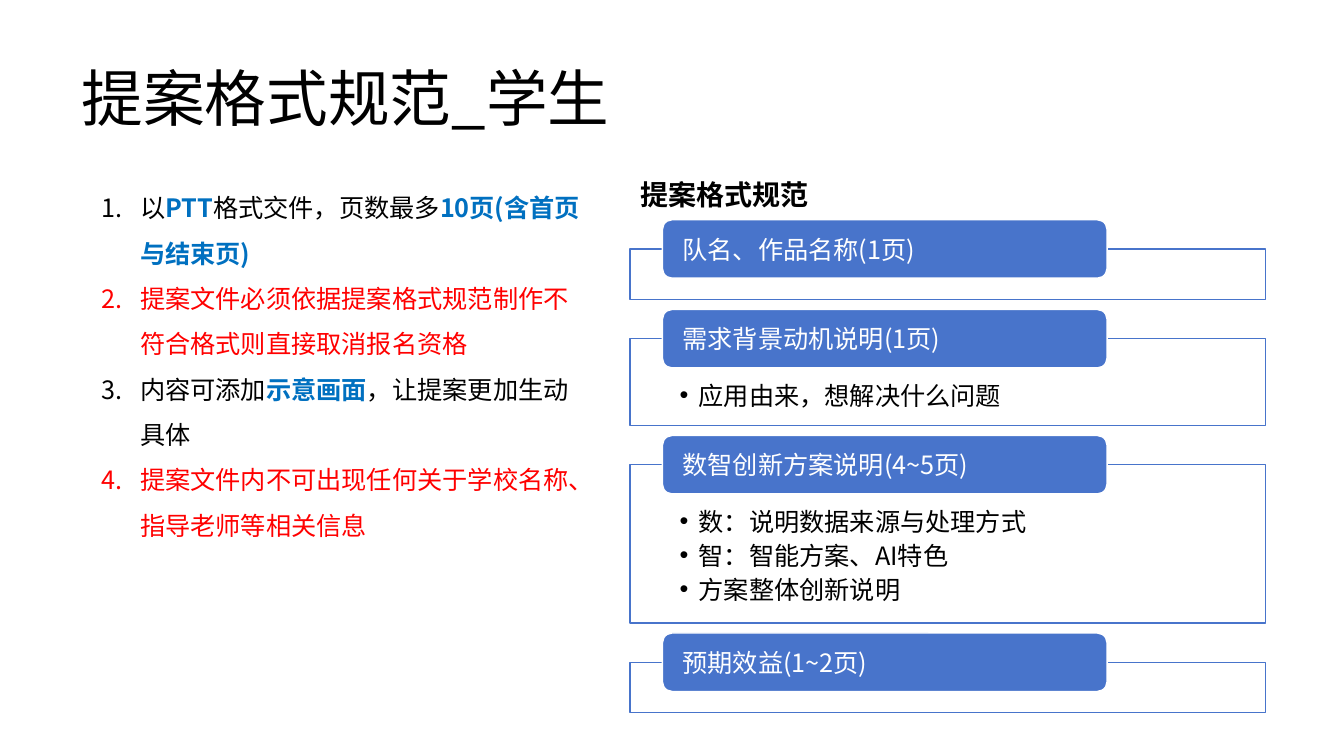
from dataclasses import dataclass

from lxml import etree
from pptx import Presentation
from pptx.dml.color import RGBColor
from pptx.enum.shapes import MSO_SHAPE as SHAPE
from pptx.enum.text import MSO_ANCHOR as ANCHOR, MSO_AUTO_SIZE as AUTO, PP_ALIGN as ALIGN
from pptx.oxml.ns import qn
from pptx.util import Inches, Pt

FONT = "Noto Sans CJK SC"
BLACK, WHITE, RED, ACCENT, FRAME = "000000", "FFFFFF", "FF0000", "0070C0", "4874CB"
LEFT, FRAME_W = 6.25, 6.3
FIRST_TOP, GAP = 2.47, 0.39
CHIP_H, CHIP_RISE = 0.58, 0.29


@dataclass
class Section:
    title: str
    height: float
    points: tuple[str, ...] = ()


RULES = [
    [("以", BLACK), ("PTT", ACCENT), ("格式交件，页数最多", BLACK), ("10页(含首页与结束页)", ACCENT)],
    [("提案文件必须依据提案格式规范制作不符合格式则直接取消报名资格", RED)],
    [("内容可添加", BLACK), ("示意画面", ACCENT), ("，让提案更加生动具体", BLACK)],
    [("提案文件内不可出现任何关于学校名称、指导老师等相关信息", RED)],
]
SECTIONS = [
    Section("队名、作品名称(1页)", 0.5),
    Section("需求背景动机说明(1页)", 0.86, ("应用由来，想解决什么问题",)),
    Section("数智创新方案说明(4~5页)", 1.57,
            ("数：说明数据来源与处理方式", "智：智能方案、AI特色", "方案整体创新说明")),
    Section("预期效益(1~2页)", 0.5),
]


def rgb(color: str) -> RGBColor:
    return RGBColor.from_string(color)


def add_text(p, text: str, *, size=18, color=BLACK, bold=False) -> None:
    r = p.add_run()
    r.text = text
    r.font.name, r.font.size, r.font.bold = FONT, Pt(size), bold
    r.font.color.rgb = rgb(color)
    etree.SubElement(r.font._element, qn("a:ea"), typeface=FONT)


def set_bullet(p, indent: float, tag: str, **attrs: str) -> None:
    pPr = p._p.get_or_add_pPr()
    pPr.set("marL", str(Inches(indent)))
    pPr.set("indent", str(-Inches(indent)))
    if tag == "a:buChar":
        etree.SubElement(pPr, qn("a:buFont"), typeface="Arial")
    etree.SubElement(pPr, qn(tag), **attrs)


def place(sp, x: float, y: float, w: float, h: float) -> None:
    sp.left, sp.top, sp.width, sp.height = map(Inches, (x, y, w, h))


def next_paragraph(tf, index: int):
    p = tf.add_paragraph() if index else tf.paragraphs[0]
    p.alignment = ALIGN.LEFT
    return p


def add_box(s, kind, box: tuple, fill: str, line: str, margins: tuple, anchor):
    sp = s.shapes.add_shape(kind, *map(Inches, box))
    sp.shadow.inherit = False
    sp.fill.solid()
    sp.fill.fore_color.rgb = rgb(fill)
    sp.line.color.rgb = rgb(line)
    sp.line.width = Pt(1)
    tf = sp.text_frame
    tf.word_wrap = True
    tf.vertical_anchor = anchor
    tf.margin_left, tf.margin_top, tf.margin_right, tf.margin_bottom = map(Inches, margins)
    return sp


def add_section(s, section: Section, top: float) -> None:
    # Frame with its points
    frame = add_box(s, SHAPE.RECTANGLE, (LEFT, top, FRAME_W, section.height),
                    WHITE, FRAME, (0.49, 0.41, 0.49, 0.14), ANCHOR.TOP)
    color = frame.fill._xPr.find(f"{qn('a:solidFill')}/{qn('a:srgbClr')}")
    etree.SubElement(color, qn("a:alpha"), val="90000")
    for i, point in enumerate(section.points):
        p = next_paragraph(frame.text_frame, i)
        set_bullet(p, 0.19, "a:buChar", char="•")
        p.space_after = Pt(2.7)
        add_text(p, point)

    # Heading chip over the frame's top edge
    chip = add_box(s, SHAPE.ROUNDED_RECTANGLE, (LEFT + 0.32, top - CHIP_RISE, 4.41, CHIP_H),
                   FRAME, WHITE, (0.17, 0, 0.17, 0), ANCHOR.MIDDLE)
    add_text(next_paragraph(chip.text_frame, 0), section.title, color=WHITE)


def main() -> None:
    prs = Presentation()
    prs.slide_width, prs.slide_height = Inches(13.33), Inches(7.5)
    s = prs.slides.add_slide(prs.slide_layouts[1])

    # Title
    title = s.shapes.title
    place(title, 0.71, 0.28, 11.5, 1.45)
    title.text_frame.vertical_anchor = ANCHOR.MIDDLE
    p = next_paragraph(title.text_frame, 0)
    p.line_spacing = 0.9
    add_text(p, "提案格式规范_学生", size=44)

    # Numbered rules
    body = s.placeholders[1]
    place(body, 0.91, 1.71, 5.06, 3.68)
    body.text_frame.auto_size = AUTO.SHAPE_TO_FIT_TEXT
    for i, rule in enumerate(RULES):
        p = next_paragraph(body.text_frame, i)
        set_bullet(p, 0.38, "a:buAutoNum", type="arabicPeriod")
        p.line_spacing = 1.5
        p.space_before = Pt(0)
        for text, color in rule:
            add_text(p, text, color=color, bold=color == ACCENT)

    # Required sections
    top = FIRST_TOP
    for section in SECTIONS:
        add_section(s, section, top)
        top += section.height + GAP

    # Heading of the sections
    heading = s.shapes.add_textbox(*map(Inches, (LEFT, 1.71, 1.87, 0.44)))
    heading.text_frame.word_wrap = False
    heading.text_frame.auto_size = AUTO.SHAPE_TO_FIT_TEXT
    add_text(next_paragraph(heading.text_frame, 0), "提案格式规范", size=20, bold=True)

    prs.save("out.pptx")


if __name__ == "__main__":
    main()
